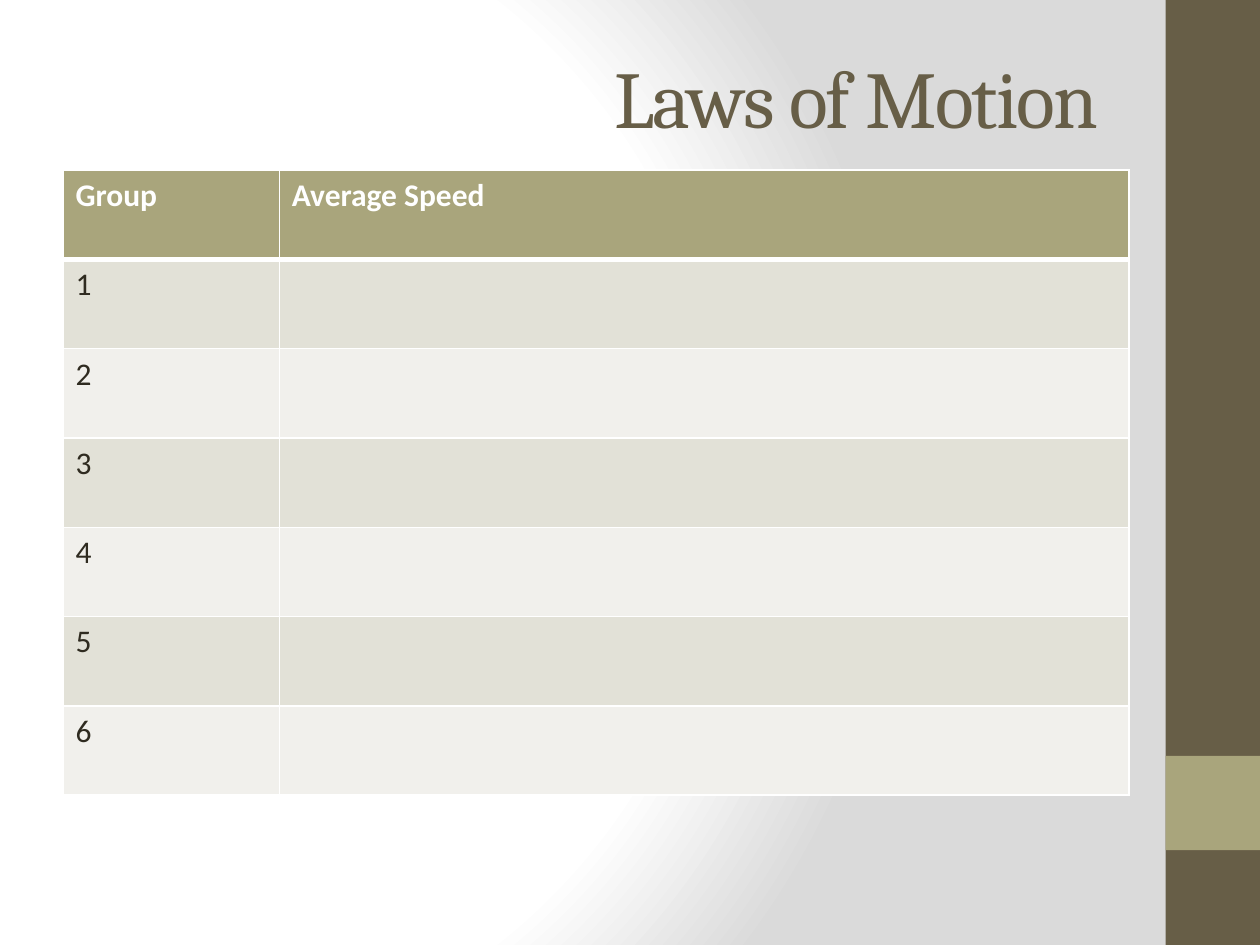
from dataclasses import dataclass

from lxml.etree import SubElement
from pptx import Presentation
from pptx.dml.color import RGBColor as Rgb
from pptx.enum.shapes import MSO_SHAPE as Kind
from pptx.enum.text import MSO_ANCHOR as Anchor, PP_ALIGN as Align
from pptx.oxml import parse_xml
from pptx.oxml.ns import nsdecls, qn
from pptx.util import Cm, Pt

HUES = {
    "brown": "675E47", "olive": "A9A57C", "ink": "2F2B20", "white": "FFFFFF",
    "odd": "E2E1D7", "even": "F1F0EC", "grey": "DADADA",
}


@dataclass
class Bar:
    top: float
    height: float
    hue: str


BARS = [Bar(0, 19.05, "brown"), Bar(15.24, 1.9, "olive")]
ROWS = [("Group", "Average Speed")] + [(str(n), "") for n in range(1, 7)]
COLS = (4.36, 17.13)
ROW_H = 1.8


def color(hue: str) -> Rgb:
    return Rgb.from_string(HUES[hue])


def draw_back(slide) -> None:
    """Radial gradient that spreads from the left."""
    slide.background.fill.solid()
    stops = "".join(
        f'<a:gs pos="{pos * 1000}"><a:srgbClr val="{HUES[hue]}"/></a:gs>'
        for pos, hue in ((0, "white"), (75, "white"), (100, "grey"))
    )
    grad = parse_xml(
        f'<a:gradFill {nsdecls("a")} rotWithShape="1"><a:gsLst>{stops}</a:gsLst>'
        '<a:path path="circle"><a:fillToRect l="20000" t="50000" '
        'r="100000" b="50000"/></a:path></a:gradFill>'
    )
    plain = slide.element.find(".//" + qn("p:bgPr")).find(qn("a:solidFill"))
    plain.getparent().replace(plain, grad)


def draw_bar(slide, bar: Bar) -> None:
    shape = slide.shapes.add_shape(
        Kind.RECTANGLE, Cm(23.5), Cm(bar.top), Cm(1.9), Cm(bar.height))
    shape.shadow.inherit = False
    shape.fill.solid()
    shape.fill.fore_color.rgb = color(bar.hue)
    shape.line.fill.background()


def set_title(slide, text: str) -> None:
    title = slide.shapes.title
    title.left, title.top = Cm(2.9), Cm(0.36)
    title.width, title.height = Cm(19.5), Cm(3.18)
    frame = title.text_frame
    frame.text = text
    frame.word_wrap = True
    frame.vertical_anchor = Anchor.MIDDLE
    para = frame.paragraphs[0]
    para.alignment = Align.RIGHT
    font = para.runs[0].font
    font.name, font.size = "Cambria", Pt(46)
    font.color.rgb = color("brown")
    para.runs[0].font._element.set("spc", "-100")


def set_edges(cell, top: int, bottom: int) -> None:
    """White borders; they must come before the fill in the cell."""
    props = cell._tc.get_or_add_tcPr()
    for side, width in (("L", 1), ("R", 1), ("T", top), ("B", bottom)):
        line = SubElement(props, qn(f"a:ln{side}"), w=str(Pt(width)))
        fill = SubElement(line, qn("a:solidFill"))
        SubElement(fill, qn("a:srgbClr"), val=HUES["white"])


def set_cell(cell, text: str, row: int) -> None:
    head = row == 0
    set_edges(cell, 3 if row == 1 else 1, 3 if head else 1)
    cell.fill.solid()
    cell.fill.fore_color.rgb = color(
        "olive" if head else "odd" if row % 2 else "even")
    cell.text_frame.text = text
    for run in cell.text_frame.paragraphs[0].runs:
        run.font.name, run.font.size = "Calibri", Pt(18)
        run.font.bold = head
        run.font.color.rgb = color("white" if head else "ink")


def draw_table(slide) -> None:
    table = slide.shapes.add_table(
        len(ROWS), len(COLS), Cm(1.27), Cm(3.43),
        Cm(sum(COLS)), Cm(ROW_H * len(ROWS))).table
    table.horz_banding = False
    for col, width in zip(table.columns, COLS):
        col.width = Cm(width)
    for i, texts in enumerate(ROWS):
        table.rows[i].height = Cm(ROW_H)
        for j, text in enumerate(texts):
            set_cell(table.cell(i, j), text, i)


def main() -> None:
    deck = Presentation()
    deck.slide_width, deck.slide_height = Cm(25.4), Cm(19.05)
    slide = deck.slides.add_slide(deck.slide_layouts[5])

    # Backdrop and side bars
    draw_back(slide)
    for bar in BARS:
        draw_bar(slide, bar)

    # Title and results table
    set_title(slide, "Laws of Motion")
    draw_table(slide)
    deck.save("out.pptx")


if __name__ == "__main__":
    main()
